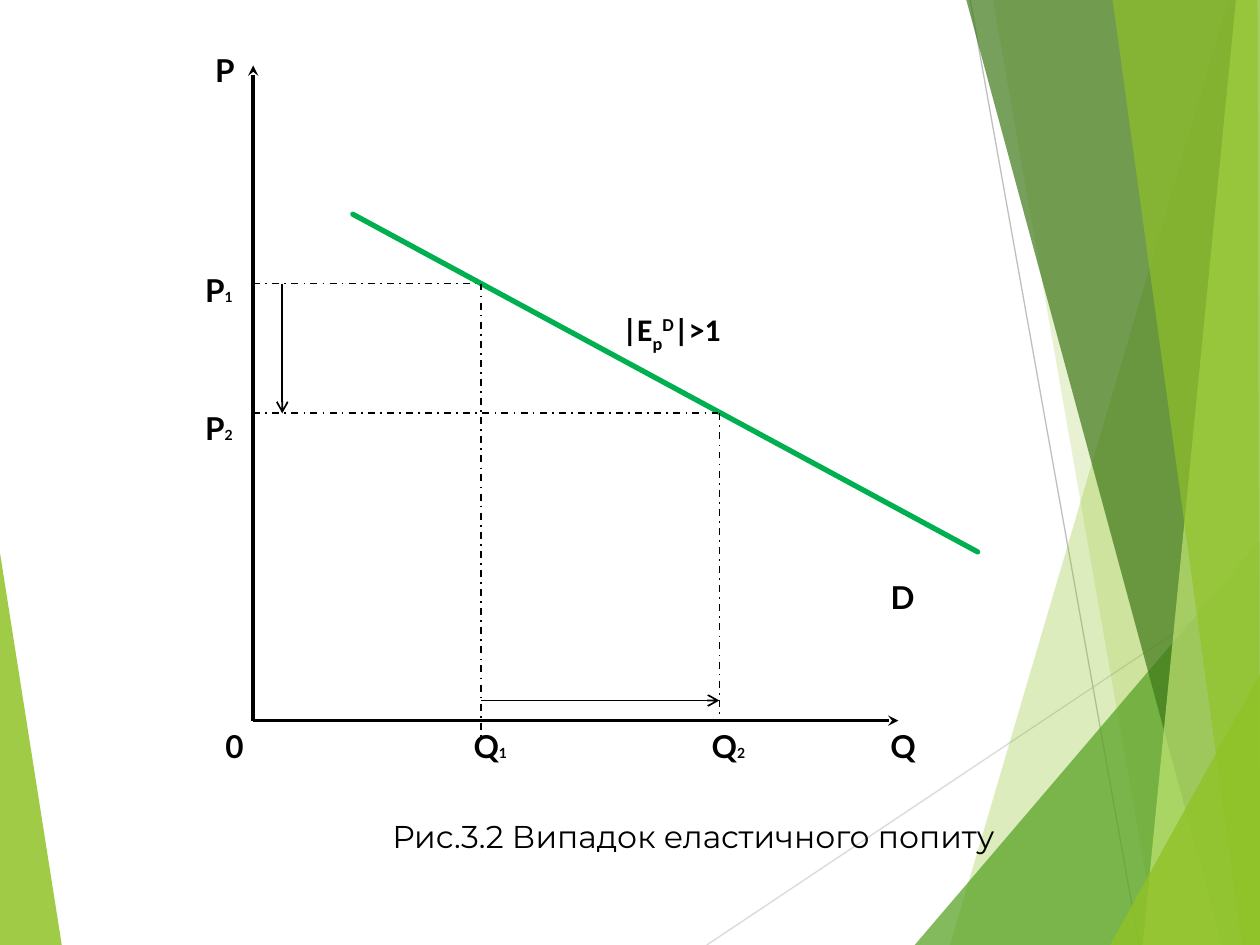
"""Build the slide that shows the case of elastic demand."""
from dataclasses import dataclass

import lxml.etree
import pptx
import pptx.dml.color
import pptx.enum.dml
import pptx.enum.shapes
import pptx.enum.text
import pptx.oxml.ns
import pptx.util

WIDTH, HEIGHT = 720, 540
AXIS_X, AXIS_Y = 144.7, 411.8
PRICE_1, PRICE_2 = 162, 236.2
QUANTITY_1, QUANTITY_2 = 275, 411.1
LABEL_HEIGHT = 28.8
BLACK, LIME = "000000", "90C226"


@dataclass
class Facet:
    points: list[tuple[float, float]]
    color: str
    opacity: int


@dataclass
class Stroke:
    start: tuple[float, float]
    end: tuple[float, float]
    color: str = BLACK
    weight: float = 1
    dashed: bool = False
    arrow: str = ""
    cap: str = "flat"


@dataclass
class Span:
    text: str
    size: float = 18
    baseline: int = 0


@dataclass
class Label:
    left: float
    top: float
    width: float
    spans: list[Span]
    font: str = "Lato"
    centered: bool = False


def indexed(letter: str, index: str) -> list[Span]:
    """Return a letter followed by a small index."""
    return [Span(letter), Span(index, 8)]


LEFT_FACET = Facet([(0, 316), (35.3, HEIGHT), (0, HEIGHT)], LIME, 85)
RIGHT_FACETS = [
    Facet([(702, 0), (542.9, HEIGHT), (WIDTH, HEIGHT), (WIDTH, 0)], LIME, 30),
    Facet([(567.4, 0), (661.7, HEIGHT), (WIDTH, HEIGHT), (WIDTH, 0)], LIME, 20),
    Facet([(522.7, HEIGHT), (WIDTH, 308.9), (WIDTH, HEIGHT)], "54A021", 72),
    Facet([(552.2, 0), (698.4, HEIGHT), (WIDTH, HEIGHT), (WIDTH, 0)], "3F7819", 70),
    Facet([(706.3, 0), (653, HEIGHT), (WIDTH, HEIGHT), (WIDTH, 0)], "C0E474", 70),
    Facet([(635.8, 0), (709.9, HEIGHT), (WIDTH, HEIGHT), (718.6, 0)], LIME, 65),
    Facet([(634.3, HEIGHT), (WIDTH, 385.2), (WIDTH, HEIGHT)], LIME, 80),
]
BACKGROUND_STROKES = [
    Stroke((403.9, HEIGHT), (WIDTH, 329), "D9D9D9", 0.75),
    Stroke((554.4, 0), (650.9, HEIGHT), "BFBFBF", 0.75),
]
GRAPH_STROKES = [
    Stroke((AXIS_X, AXIS_Y), (AXIS_X, 37.4), weight=2, arrow="stealth"),
    Stroke((AXIS_X, AXIS_Y), (513.4, AXIS_Y), weight=2, arrow="stealth"),
    Stroke((AXIS_X, PRICE_1), (QUANTITY_1, PRICE_1), dashed=True),
    Stroke((201.6, 122.4), (558.7, 315.4), "00B050", 3, cap="rnd"),
    Stroke((QUANTITY_1, PRICE_1), (QUANTITY_1, 423.4), dashed=True),
    Stroke((AXIS_X, PRICE_2), (QUANTITY_2, PRICE_2), dashed=True),
    Stroke((QUANTITY_2, PRICE_2), (QUANTITY_2, AXIS_Y), dashed=True),
    Stroke((161.3, PRICE_1), (161.3, PRICE_2), arrow="arrow"),
    Stroke((QUANTITY_1, 400.3), (QUANTITY_2, 400.3), arrow="arrow"),
]
LABELS = [
    Label(115.9, 25.9, 28, [Span("P")]),
    Label(501.8, AXIS_Y, 33.8, [Span("Q")]),
    Label(121.7, AXIS_Y, 28, [Span("0")]),
    Label(110.2, 151.2, 45.4, indexed("P", "1")),
    Label(110.2, 230.4, 45.4, indexed("P", "2")),
    Label(QUANTITY_1 - 11.5, AXIS_Y, 39.6, indexed("Q", "1")),
    Label(QUANTITY_2 - 11.5, AXIS_Y, 39.6, indexed("Q", "2")),
    Label(348.5, 173.5, 73.4,
          [Span("|E"), Span("p", baseline=-30), Span("D", baseline=30), Span("|˃1")],
          "Calibri"),
    Label(501.8, 326.9, 22.3, [Span("D")]),
]
CAPTION = Label(155.5, 463, 481.7, [Span("Рис.3.2 Випадок еластичного попиту")],
                "Montserrat", True)


def paint(target, color: str) -> None:
    """Set a color format to a hex color."""
    target.rgb = pptx.dml.color.RGBColor.from_string(color)


def add_child(parent, tag: str, **attributes: str) -> None:
    """Append a drawing element to a parent element."""
    lxml.etree.SubElement(parent, pptx.oxml.ns.qn(tag), attributes)


def draw_facet(page, facet: Facet) -> None:
    """Draw one translucent polygon."""
    points = [(pptx.util.Pt(x), pptx.util.Pt(y)) for x, y in facet.points]
    builder = page.shapes.build_freeform(*points[0])
    builder.add_line_segments(points[1:])
    shape = builder.convert_to_shape()
    shape.shadow.inherit = False
    shape.line.fill.background()
    shape.fill.solid()
    paint(shape.fill.fore_color, facet.color)
    color = shape.element.spPr.find(".//" + pptx.oxml.ns.qn("a:srgbClr"))
    add_child(color, "a:alpha", val=str(facet.opacity * 1000))


def draw_stroke(page, stroke: Stroke) -> None:
    """Draw one straight line or arrow."""
    ends = [pptx.util.Pt(value) for value in (*stroke.start, *stroke.end)]
    connector = page.shapes.add_connector(
        pptx.enum.shapes.MSO_CONNECTOR.STRAIGHT, *ends)
    line = connector.line
    line.width = pptx.util.Pt(stroke.weight)
    paint(line.color, stroke.color)
    if stroke.dashed:
        line.dash_style = pptx.enum.dml.MSO_LINE.DASH_DOT
    properties = connector.element.spPr
    outline = properties.find(pptx.oxml.ns.qn("a:ln"))
    outline.set("cap", stroke.cap)
    if stroke.arrow:
        add_child(outline, "a:tailEnd", type=stroke.arrow)
    add_child(properties, "a:effectLst")


def write_label(box, label: Label) -> None:
    """Write the spans of a label into a box."""
    frame = box.text_frame
    frame.word_wrap = label.font != "Calibri"
    frame.auto_size = pptx.enum.text.MSO_AUTO_SIZE.NONE
    frame.vertical_anchor = pptx.enum.text.MSO_ANCHOR.TOP
    para = frame.paragraphs[0]
    alignment = pptx.enum.text.PP_ALIGN
    para.alignment = alignment.CENTER if label.centered else alignment.LEFT
    para.font.name = label.font
    para.font.bold = not label.centered
    paint(para.font.color, BLACK)
    for part in label.spans:
        span = para.add_run()
        span.text = part.text
        span.font.size = pptx.util.Pt(part.size)
        if part.baseline:
            span._r.get_or_add_rPr().set("baseline", str(part.baseline * 1000))


def draw_label(page, label: Label) -> None:
    """Draw one text box on the graph."""
    area = (label.left, label.top, label.width, LABEL_HEIGHT)
    write_label(page.shapes.add_textbox(*map(pptx.util.Pt, area)), label)


def place_caption(page, label: Label) -> None:
    """Move the title placeholder to the front and below the graph."""
    title = page.shapes.title
    title.left, title.top = pptx.util.Pt(label.left), pptx.util.Pt(label.top)
    title.width, title.height = pptx.util.Pt(label.width), pptx.util.Pt(LABEL_HEIGHT)
    title.element.getparent().append(title.element)
    write_label(title, label)


def main() -> None:
    """Build and save the deck."""
    deck = pptx.Presentation()
    deck.slide_width, deck.slide_height = pptx.util.Pt(WIDTH), pptx.util.Pt(HEIGHT)
    page = deck.slides.add_slide(deck.slide_layouts.get_by_name("Title Only"))
    draw_facet(page, LEFT_FACET)
    for stroke in BACKGROUND_STROKES:
        draw_stroke(page, stroke)
    for facet in RIGHT_FACETS:
        draw_facet(page, facet)
    for stroke in GRAPH_STROKES:
        draw_stroke(page, stroke)
    for label in LABELS:
        draw_label(page, label)
    place_caption(page, CAPTION)
    deck.save("out.pptx")


if __name__ == "__main__":
    main()
